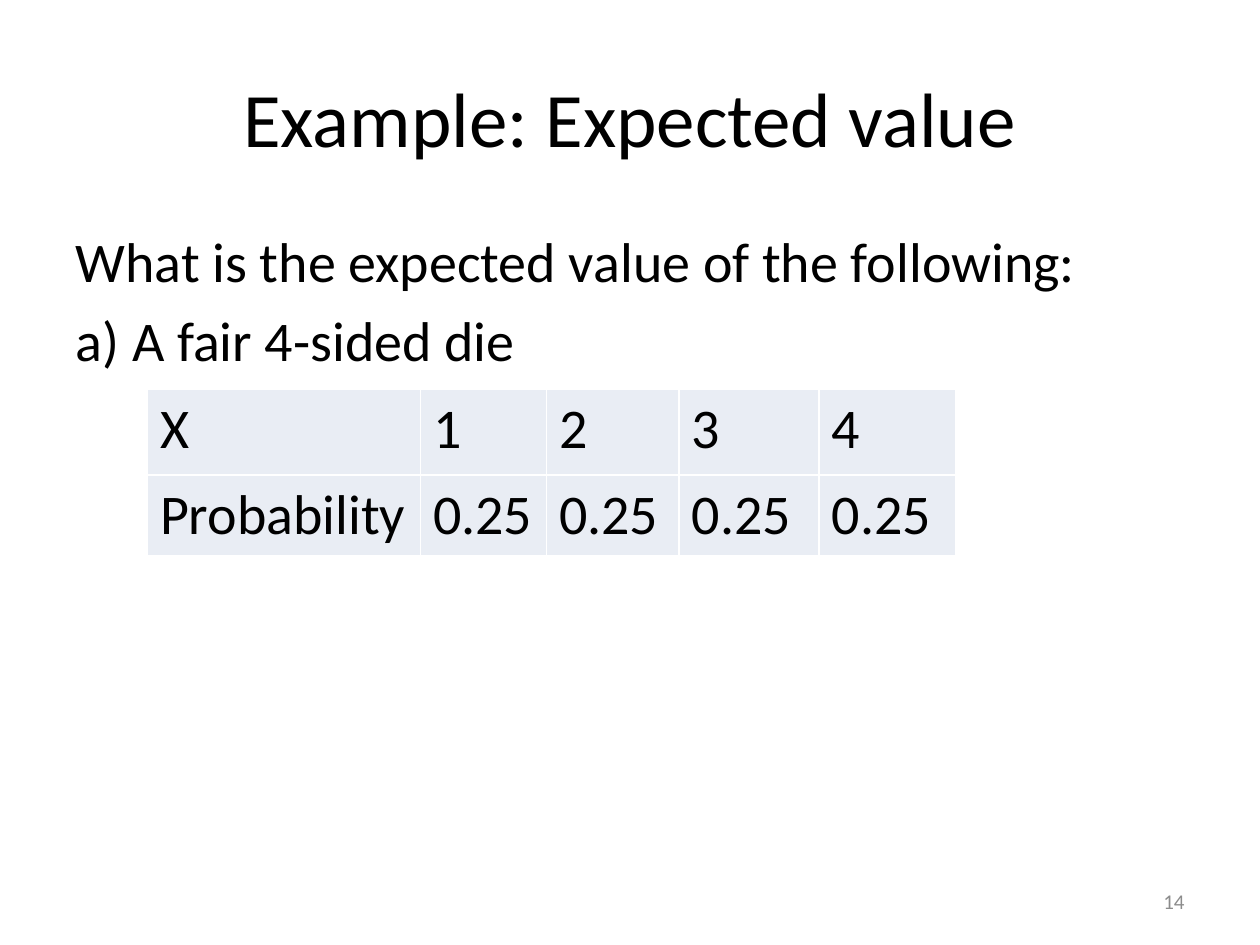
import pptx
import pptx.util
import pptx.dml.color
import pptx.enum.text
import pptx.oxml.ns
import lxml.etree

Pt = pptx.util.Pt
Align = pptx.enum.text.PP_ALIGN
Anchor = pptx.enum.text.MSO_ANCHOR

# Content
TITLE = "Example: Expected value"
QUESTION = ["What is the expected value of the following:", "a) A fair 4-sided die"]
DISTRIBUTION = [
    ["X", "1", "2", "3", "4"],
    ["Probability", "0.25", "0.25", "0.25", "0.25"],
]
PAGE_NUMBER = "14"

# Look
THEME = {
    "font": "Calibri",
    "ink": "000000", "muted": "8C8C8C", "cell": "E9EDF4", "rule": "FFFFFF",
    "title": 44, "text": 32, "number": 12,
}

# Layout, in points: left, top, width, height
TITLE_AREA = (36, 21.6, 648, 90)
BODY_AREA = (36, 126, 648, 356.4)
NUMBER_AREA = (516.24, 500.4, 167.76, 28.8)
TABLE_ORIGIN = (84.24, 222.48)
COLUMN_WIDTHS = [156, 72, 75.9, 80, 77.9]
ROW_HEIGHTS = [49, 46]
HANGING_INDENT = 40
SPACE_BEFORE = 0.2 * THEME["text"]


def color(name):
    return pptx.dml.color.RGBColor.from_string(THEME[name])


def set_all(target, values):
    for name, value in values.items():
        setattr(target, name, value)


def place(box, area):
    set_all(box, dict(zip(("left", "top", "width", "height"), map(Pt, area))))


def write(frame, lines, size, ink="ink", **para_format):
    """Fill a text frame with one formatted paragraph per line."""
    for index, line in enumerate(lines):
        para = frame.paragraphs[0] if index == 0 else frame.add_paragraph()
        set_all(para, para_format)
        span = para.add_run()
        span.text = line
        set_all(span.font, {"name": THEME["font"], "size": Pt(THEME[size])})
        span.font.color.rgb = color(ink)


def hang_without_bullet(para):
    properties = para._p.get_or_add_pPr()
    properties.set("marL", str(Pt(HANGING_INDENT)))
    properties.set("indent", str(-Pt(HANGING_INDENT)))
    lxml.etree.SubElement(properties, pptx.oxml.ns.qn("a:buNone"))


def add_borders(cell):
    """Draw thin lines on all four sides; they must precede the fill."""
    properties = cell._tc.get_or_add_tcPr()
    for index, side in enumerate(("lnL", "lnR", "lnT", "lnB")):
        line = properties.makeelement(pptx.oxml.ns.qn("a:" + side), {"w": str(Pt(1))})
        fill = lxml.etree.SubElement(line, pptx.oxml.ns.qn("a:solidFill"))
        lxml.etree.SubElement(fill, pptx.oxml.ns.qn("a:srgbClr"), val=THEME["rule"])
        properties.insert(index, line)


def add_distribution(page):
    size = (sum(COLUMN_WIDTHS), sum(ROW_HEIGHTS))
    table = page.shapes.add_table(
        len(DISTRIBUTION), len(COLUMN_WIDTHS), *map(Pt, TABLE_ORIGIN + size)
    ).table
    set_all(table, {"first_row": False, "horz_banding": False})
    for column, width in zip(table.columns, COLUMN_WIDTHS):
        column.width = Pt(width)
    for row, height, values in zip(table.rows, ROW_HEIGHTS, DISTRIBUTION):
        row.height = Pt(height)
        for cell, value in zip(row.cells, values):
            write(cell.text_frame, [value], "text")
            cell.fill.solid()
            cell.fill.fore_color.rgb = color("cell")
            add_borders(cell)


def main():
    deck = pptx.Presentation()
    set_all(deck, {"slide_width": Pt(720), "slide_height": Pt(540)})
    page = deck.slides.add_slide(deck.slide_layouts[1])

    # Title and question
    title, body = page.placeholders
    place(title, TITLE_AREA)
    title.text_frame.vertical_anchor = Anchor.MIDDLE
    write(title.text_frame, [TITLE], "title", alignment=Align.CENTER)
    place(body, BODY_AREA)
    write(body.text_frame, QUESTION, "text", space_before=Pt(SPACE_BEFORE))
    for para in body.text_frame.paragraphs:
        hang_without_bullet(para)

    # Probability table
    add_distribution(page)

    # Page number
    number = page.shapes.add_textbox(*map(Pt, NUMBER_AREA))
    set_all(number.text_frame, {"word_wrap": True, "vertical_anchor": Anchor.MIDDLE})
    write(number.text_frame, [PAGE_NUMBER], "number", "muted", alignment=Align.RIGHT)

    deck.save("out.pptx")


if __name__ == "__main__":
    main()
